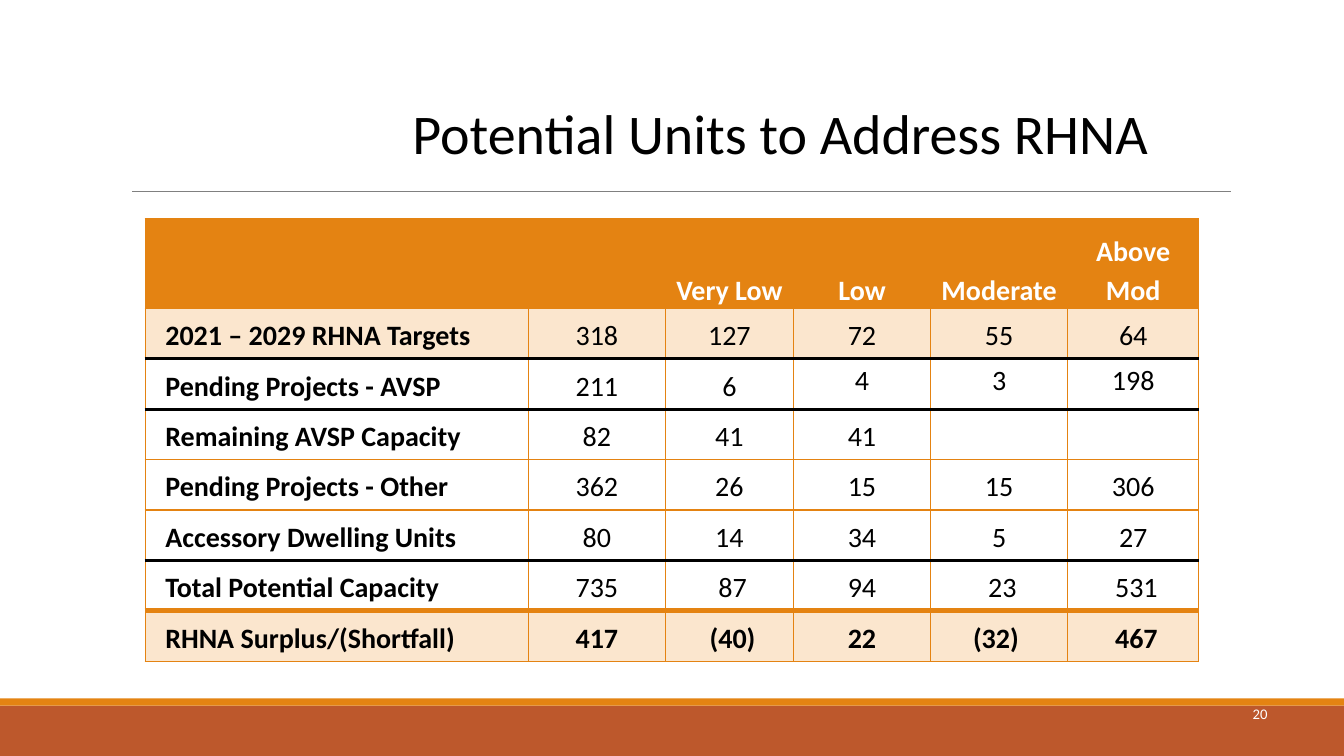
from lxml.etree import SubElement
from pptx import Presentation
from pptx.dml.color import RGBColor
from pptx.enum.shapes import MSO_CONNECTOR, MSO_SHAPE
from pptx.enum.text import MSO_ANCHOR as Anchor, MSO_AUTO_SIZE, PP_ALIGN as Align
from pptx.oxml.ns import qn
from pptx.util import Inches, Pt

FONT = "Calibri"
ORANGE, RUST, CREAM = "E48312", "BD582C", "FBE6CE"
BLACK, WHITE, GRAY = "000000", "FFFFFF", "808080"

COLUMN_WIDTHS = [3.8, 1.36, 1.27, 1.36, 1.36, 1.3]
HEADER_HEIGHT, ROW_HEIGHT = 0.89, 0.5
UNIT_ROWS = [
    ["", "", "Very Low", "Low", "Moderate", "Above Mod"],
    ["2021 – 2029 RHNA Targets", "318", "127", "72", "55", "64"],
    ["Pending Projects - AVSP", "211", "6", "4", "3", "198"],
    ["Remaining AVSP Capacity", "82", "41", "41", "", ""],
    ["Pending Projects - Other", "362", "26", "15", "15", "306"],
    ["Accessory Dwelling Units", "80", "14", "34", "5", "27"],
    ["Total Potential Capacity", "735", " 87", "94", " 23", " 531"],
    ["RHNA Surplus/(Shortfall)", "417", " (40)", "22", "(32) ", " 467"],
]
LAST_ROW = len(UNIT_ROWS) - 1
ROW_FILLS = {0: ORANGE, 1: CREAM, LAST_ROW: CREAM}
THIN_RULE, BLACK_RULE = (ORANGE, 1), (BLACK, 2.25)
# Rules above the numbered rows; every other rule is thin
ROW_RULES = {2: BLACK_RULE, 3: BLACK_RULE, 6: BLACK_RULE, 7: (ORANGE, 4)}


def color(value):
    return RGBColor.from_string(value)


def set_format(target, values):
    for name, value in values.items():
        setattr(target, name, value)


def write_text(frame, text, size, text_color, bold=False, **paragraph_format):
    paragraph = frame.paragraphs[0]
    paragraph.text = text
    set_format(paragraph, paragraph_format)
    set_format(paragraph.font, {"name": FONT, "size": Pt(size), "bold": bold})
    paragraph.font.color.rgb = color(text_color)
    return paragraph


def add_band(slide, left, top, width, height, fill):
    band = slide.shapes.add_shape(
        MSO_SHAPE.RECTANGLE, Inches(left), Inches(top), Inches(width), Inches(height))
    band.shadow.inherit = False
    band.fill.solid()
    band.fill.fore_color.rgb = color(fill)
    band.line.fill.background()


def add_footer(slide, left, top, width, height, number):
    stripe = 0.07
    add_band(slide, left, top + stripe, width, height - stripe, RUST)
    add_band(slide, left, top, width, stripe, ORANGE)
    box = slide.shapes.add_textbox(
        Inches(left + width - 3.77), Inches(top - 0.1), Inches(3.11), Inches(0.5))
    set_format(box.text_frame, {"word_wrap": True, "vertical_anchor": Anchor.MIDDLE})
    write_text(box.text_frame, number, 10.5, WHITE, alignment=Align.RIGHT)


def add_title(slide, left, top, width, height, text):
    title = slide.shapes.title
    set_format(title, {"left": Inches(left + 2.68), "top": Inches(top),
                       "width": Inches(width - 2.22), "height": Inches(height - 0.2)})
    set_format(title.text_frame, {"word_wrap": True, "vertical_anchor": Anchor.TOP,
                                  "auto_size": MSO_AUTO_SIZE.NONE})
    write_text(title.text_frame, text, 40, BLACK, alignment=Align.LEFT)
    bottom = Inches(top + height)
    rule = slide.shapes.add_connector(
        MSO_CONNECTOR.STRAIGHT, Inches(left), bottom, Inches(left + width), bottom)
    rule.line.color.rgb = color(GRAY)
    rule.line.width = Pt(0.5)
    SubElement(rule._element.spPr, qn("a:effectLst"))


def set_borders(cell, row):
    rules = {"L": THIN_RULE, "R": THIN_RULE,
             "T": ROW_RULES.get(row, THIN_RULE), "B": ROW_RULES.get(row + 1, THIN_RULE)}
    properties = cell._tc.get_or_add_tcPr()
    for side, (line_color, width) in rules.items():
        line = SubElement(properties, qn(f"a:ln{side}"), w=str(Pt(width)))
        fill = SubElement(line, qn("a:solidFill"))
        SubElement(fill, qn("a:srgbClr"), val=line_color)


def fill_cell(cell, row, column, text):
    set_borders(cell, row)
    if row in ROW_FILLS:
        cell.fill.solid()
        cell.fill.fore_color.rgb = color(ROW_FILLS[row])
    else:
        cell.fill.background()
    raised = row == 2 and column >= 3
    anchor = Anchor.BOTTOM if row == 0 else Anchor.TOP if raised else Anchor.MIDDLE
    set_format(cell, {"margin_left": Inches(0.07), "margin_right": Inches(0.07),
                      "margin_top": 0, "margin_bottom": 0, "vertical_anchor": anchor})
    if not text:
        return
    is_label = column == 0
    spacing = Pt(0 if row == 0 else 2)
    paragraph = write_text(
        cell.text_frame, text, 20, WHITE if row == 0 else BLACK,
        bold=is_label or row in (0, LAST_ROW),
        alignment=Align.LEFT if is_label else Align.CENTER,
        line_spacing=1.15, space_before=spacing, space_after=spacing)
    if is_label:
        paragraph._p.get_or_add_pPr().set("marL", str(Inches(0.13)))


def add_units_table(slide, left, top):
    height = HEADER_HEIGHT + ROW_HEIGHT * LAST_ROW
    frame = slide.shapes.add_table(
        len(UNIT_ROWS), len(COLUMN_WIDTHS), Inches(left), Inches(top),
        Inches(sum(COLUMN_WIDTHS)), Inches(height))
    table = frame.table
    table.horz_banding = False
    for column, width in zip(table.columns, COLUMN_WIDTHS):
        column.width = Inches(width)
    for row, texts in enumerate(UNIT_ROWS):
        table.rows[row].height = Inches(ROW_HEIGHT if row else HEADER_HEIGHT)
        for column, text in enumerate(texts):
            fill_cell(table.cell(row, column), row, column, text)


def main():
    presentation = Presentation()
    presentation.slide_width = Inches(13.33)
    presentation.slide_height = Inches(7.5)
    slide = presentation.slides.add_slide(presentation.slide_layouts[5])
    add_footer(slide, 0, 6.93, 13.33, 0.57, "20")
    add_title(slide, 1.31, 0.93, 10.9, 0.97, "Potential Units to Address RHNA")
    add_units_table(slide, 1.44, 2.17)
    presentation.save("out.pptx")


if __name__ == "__main__":
    main()
